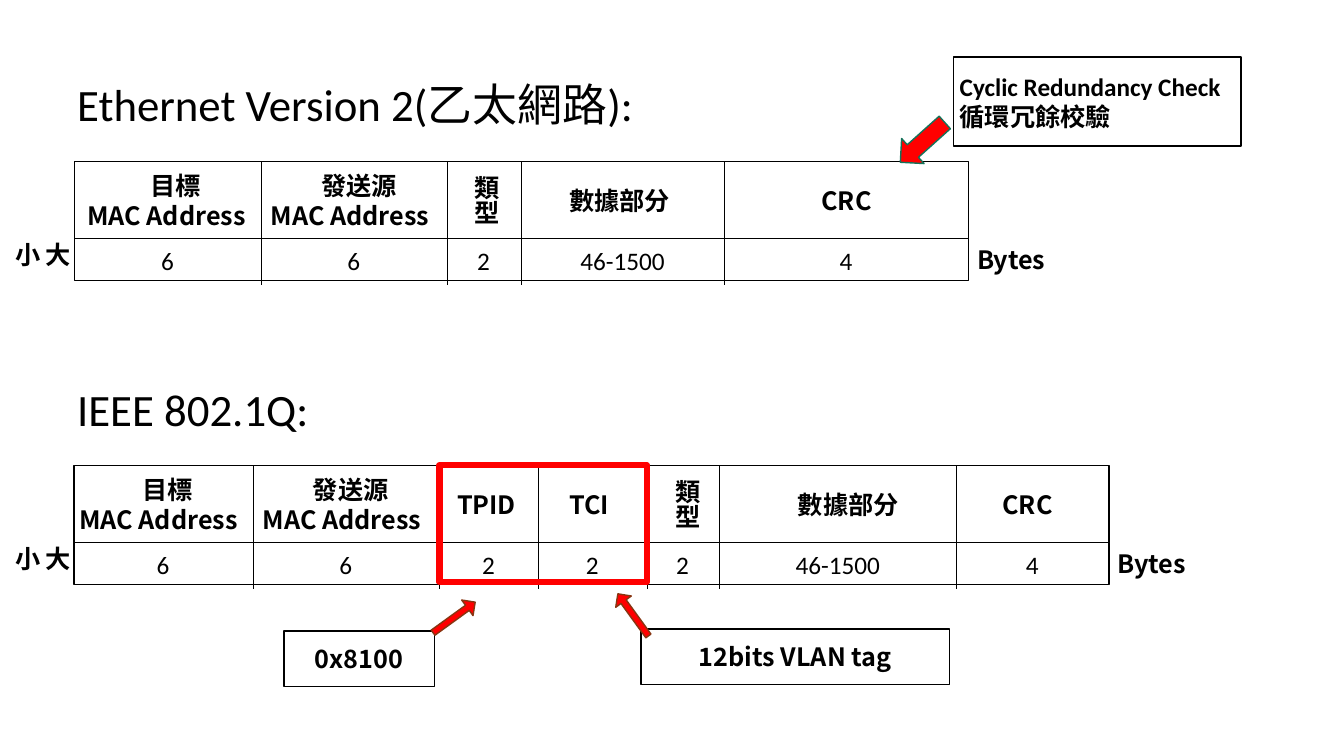
from pptx import Presentation
from pptx import util as u
from pptx.dml.color import RGBColor
from pptx.enum import shapes, text
from pptx.oxml import ns
from lxml import etree

COLS, ROWS = 160, 90
UNIT = u.Inches(7.5) // ROWS
HEAD, VALUE = 9.2, 5  # rows of a frame's two bands
INK = {"black": "000000", "white": "FFFFFF", "red": "FF0000",
       "green": "157259", "brown": "873612"}
SANS, CJK = "Calibri", "Noto Sans CJK SC"
LEFT, MID = text.PP_ALIGN.LEFT, text.PP_ALIGN.CENTER

# Each field: width, name, size in bytes, shift of the name
ETHER = [
    (22.2, "目標\nMAC Address", "6", -0.2),
    (22.1, "發送源\nMAC Address", "6", -0.5),
    (8.8, "類型", "2", -0.3),
    (24.2, "數據部分", "46-1500", -1.4),
    (29.1, "CRC", "4", 0),
]
VLAN = [
    (21.3, "目標\nMAC Address", "6", -0.6),
    (22.2, "發送源\nMAC Address", "6", -0.5),
    (11.8, "TPID", "2", -0.3),
    (12.9, "TCI", "2", -0.4),
    (8.6, "類型", "2", -0.1),
    (28.2, "數據部分", "46-1500", 0.2),
    (18.2, "CRC", "4", -0.6),
]


def grid(*cells):
    return [u.Emu(round(c * UNIT)) for c in cells]


def tint(name):
    return RGBColor.from_string(INK[name])


def fill_text(shape, words, font=CJK, size=18, bold=True, align=LEFT, lead=0):
    """Write one paragraph per line; lead indents the lines that are not ASCII."""
    frame = shape.text_frame
    frame.word_wrap = True
    for i, line in enumerate(words.split("\n")):
        para = frame.add_paragraph() if i else frame.paragraphs[0]
        para.alignment = align
        if lead and not line.isascii():
            para._p.get_or_add_pPr().set("marL", str(grid(lead)[0]))
        run = para.add_run()
        run.text = line
        style = {"name": font, "size": u.Pt(size), "bold": bold}
        for key, val in style.items():
            setattr(run.font, key, val)
        run.font.color.rgb = tint("black")
        east = etree.SubElement(run._r.get_or_add_rPr(), ns.qn("a:ea"))
        east.set("typeface", CJK)


def label(slide, box, words, vert=False, **style):
    shape = slide.shapes.add_textbox(*grid(*box))
    fill_text(shape, words, **style)
    shape.text_frame.auto_size = text.MSO_AUTO_SIZE.SHAPE_TO_FIT_TEXT
    if vert:
        shape.text_frame._txBody.bodyPr.set("vert", "eaVert")


def block(slide, box, fill=None, line="black", width=1,
          kind=shapes.MSO_SHAPE.RECTANGLE):
    shape = slide.shapes.add_shape(kind, *grid(*box))
    shape.shadow.inherit = False
    if fill:
        shape.fill.solid()
        shape.fill.fore_color.rgb = tint(fill)
    else:
        shape.fill.background()
    shape.line.color.rgb = tint(line)
    shape.line.width = u.Pt(width)
    return shape


def note(slide, box, words, **style):
    shape = block(slide, box)
    shape.text_frame.margin_left = shape.text_frame.margin_right = u.Inches(0.06)
    shape.text_frame.vertical_anchor = text.MSO_ANCHOR.MIDDLE
    fill_text(shape, words, **style)


def arrow(slide, box, turn, line, stem=0.5):
    shape = block(slide, box, "red", line, kind=shapes.MSO_SHAPE.DOWN_ARROW)
    shape.adjustments[0] = stem
    shape.rotation = turn


def rule(slide, x, top, end):
    line = slide.shapes.add_connector(
        shapes.MSO_CONNECTOR.STRAIGHT, *grid(x, top, x, end))
    line.line.color.rgb = tint("black")
    line.line.width = u.Pt(0.5)
    etree.SubElement(line._element.spPr, ns.qn("a:effectLst"))


def field(slide, left, top, width, name, value, shift):
    mid = left + width / 2
    if width < 9:  # a narrow column stacks its name, with room for both signs
        box = (mid + shift - 3, top + 0.5, 6, 10.5)
        label(slide, box, name, True)
    else:
        wide = 10 if width < 15 else 26.3
        tall = 8.5 if "\n" in name else 4.8
        box = (mid + shift - wide / 2, top + 4.7 - tall / 2, wide, tall)
        label(slide, box, name, align=MID, lead=2.1)
    size = len(value)
    box = (mid - 1.3 - 0.7 * size, top + 9.4, 6 + 1.28 * size, 4.8)
    label(slide, box, value, font=SANS, bold=False)


def packet(slide, left, top, title, fields):
    """Draw a titled frame layout: names above, sizes in bytes below."""
    label(slide, (8, top - 10.6, 71.6, 7.7), title, font=SANS, size=32, bold=False)
    total = sum(f[0] for f in fields)
    block(slide, (left, top, total, HEAD), "white")
    block(slide, (left, top + HEAD, total, VALUE), "white")
    x = left
    for width, *rest in fields:
        if x > left:
            rule(slide, x, top, top + 14.7)
        field(slide, x, top, width, *rest)
        x += width
    label(slide, (3.2, top + 8.5, 6, 7.7), "大小", True)
    label(slide, (x - 0.2, top + 9.3, 10.9, 4.8), "Bytes")


def main():
    deck = Presentation()
    deck.slide_width, deck.slide_height = u.Inches(13.33), u.Inches(7.5)
    slide = deck.slides.add_slide(deck.slide_layouts[6])

    packet(slide, 8.9, 19.2, "Ethernet Version 2(乙太網路):", ETHER)
    note(slide, (113.5, 6.8, 34.2, 10.6),
         "Cyclic Redundancy Check\n循環冗餘校驗", font=SANS)
    arrow(slide, (107.8, 13.4, 4, 7.1), 48.1, "green")

    packet(slide, 8.8, 55.4, "IEEE 802.1Q:", VLAN)
    block(slide, (52.3, 55.4, 24.7, 13.9), line="red", width=4.5)
    note(slide, (33.8, 75.1, 17.9, 6.6), "0x8100", align=MID)
    note(slide, (76.3, 74.9, 36.7, 6.6), "12bits VLAN tag", align=MID)
    arrow(slide, (74.2, 70.1, 2.3, 6.2), 144.1, "brown", 0.33)
    arrow(slide, (52.9, 70.4, 2.3, 6.2), 234.1, "brown", 0.33)

    deck.save("out.pptx")


if __name__ == "__main__":
    main()
